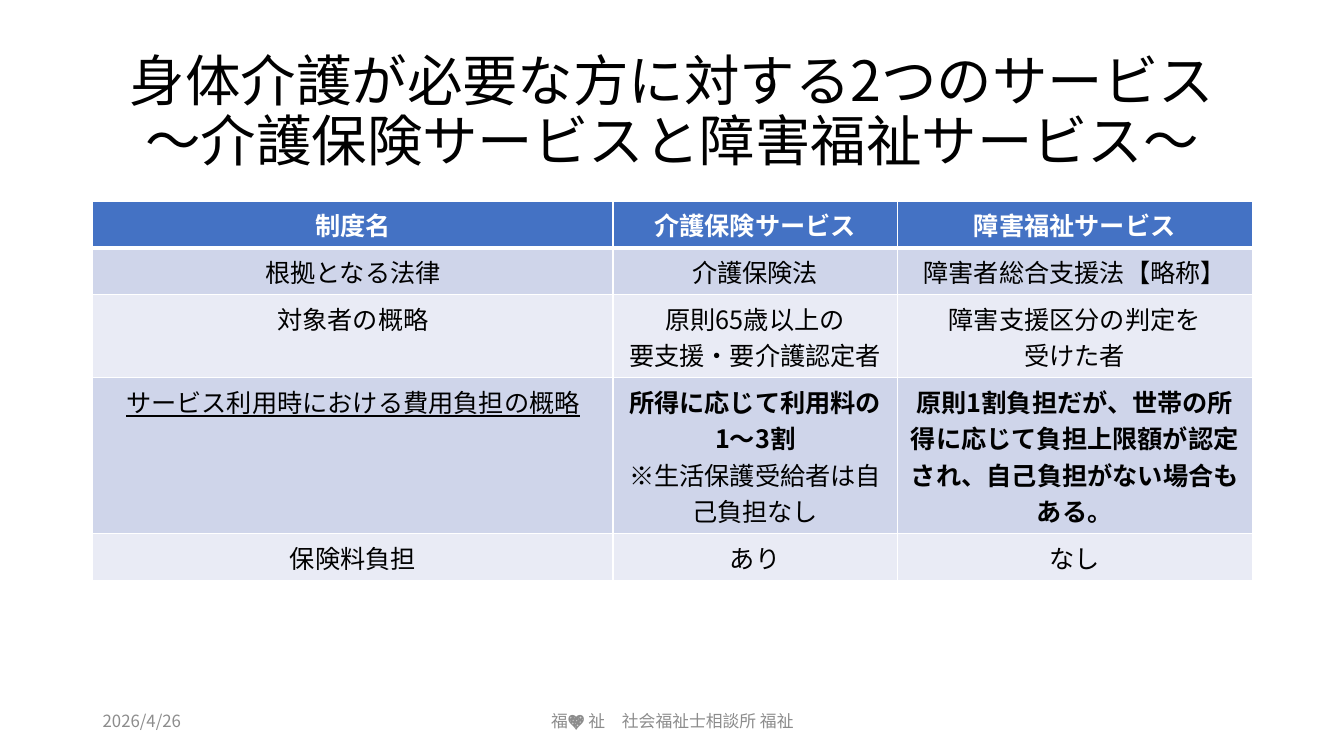
from pptx import Presentation
from pptx import util as u
from pptx.dml.color import RGBColor
from pptx.enum import text
from pptx.oxml.ns import qn
from lxml import etree

FONT = "Noto Sans CJK JP"
WIDTH, HEIGHT = u.Inches(13.33), u.Inches(7.5)
MARGIN = u.Inches(0.92)
COLUMNS = (5.16, 2.82, 3.52)
ROW = u.Inches(0.41)
BLACK, WHITE, GREY = "000000", "FFFFFF", "8C8C8C"
HEADER, BANDS = "4472C4", ("CFD5EA", "E9EBF5")
CENTER = text.PP_ALIGN.CENTER

# A cell is a list of paragraphs: (text, format)
BOLD, LINED = {"bold": True}, {"underline": True}
ROWS = [
    [[("制度名", BOLD)], [("介護保険サービス", BOLD)], [("障害福祉サービス", BOLD)]],
    [[("根拠となる法律", {})], [("介護保険法", {})], [("障害者総合支援法【略称】", {})]],
    [[("対象者の概略", {})],
     [("原則65歳以上の", {}), ("要支援・要介護認定者", {})],
     [("障害支援区分の判定を", {}), ("受けた者", {})]],
    [[("サービス利用時における費用負担の概略", LINED)],
     [("所得に応じて利用料の", BOLD), ("1～3割", BOLD),
      ("※生活保護受給者は自己負担なし", {})],
     [("原則1割負担だが、世帯の所得に応じて負担上限額が認定され、"
       "自己負担がない場合もある。", BOLD)]],
    [[("保険料負担", {})], [("あり", {})], [("なし", {})]],
]


def rgb(value):
    return RGBColor.from_string(value)


def write(p, words, size=18, color=BLACK, bold=False, underline=False,
          align=CENTER, spacing=None):
    """Fill a paragraph; a vertical tab in the words breaks the line."""
    p.text = words
    p.alignment = align
    if spacing:
        p.line_spacing = spacing
    for r in p.runs:
        r.font.size = u.Pt(size)
        r.font.name = FONT
        r.font.bold = bold
        r.font.underline = underline
        r.font.color.rgb = rgb(color)
        etree.SubElement(r.font._element, qn("a:ea"), typeface=FONT)


def place(sp, left, top, width, height):
    sp.left, sp.top, sp.width, sp.height = map(int, (left, top, width, height))


def add_title(s, words):
    sp = s.shapes.title
    place(sp, MARGIN, u.Inches(0.4), WIDTH - 2 * MARGIN, u.Inches(1.45))
    tf = sp.text_frame
    tf.auto_size = text.MSO_AUTO_SIZE.NONE
    tf.vertical_anchor = text.MSO_ANCHOR.MIDDLE
    write(tf.paragraphs[0], words, size=39.6, spacing=0.9)


def add_footer(s, words, left, width, align):
    sp = s.shapes.add_textbox(left, u.Inches(6.95), width, u.Inches(0.4))
    tf = sp.text_frame
    tf.word_wrap = True
    tf.vertical_anchor = text.MSO_ANCHOR.MIDDLE
    write(tf.paragraphs[0], words, size=12, color=GREY, align=align)


def add_borders(cell, top, bottom):
    tcPr = cell._tc.get_or_add_tcPr()
    for side, points in (("L", 1), ("R", 1), ("T", top), ("B", bottom)):
        ln = etree.SubElement(tcPr, qn(f"a:ln{side}"), w=str(u.Pt(points)))
        fill = etree.SubElement(ln, qn("a:solidFill"))
        etree.SubElement(fill, qn("a:srgbClr"), val=WHITE)


def fill_cell(cell, paragraphs, row):
    # A thick rule parts the header from the body
    add_borders(cell, top=3 if row == 1 else 1, bottom=3 if row == 0 else 1)
    cell.fill.solid()
    cell.fill.fore_color.rgb = rgb(BANDS[(row - 1) % 2] if row else HEADER)
    tf = cell.text_frame
    for i, (words, look) in enumerate(paragraphs):
        p = tf.add_paragraph() if i else tf.paragraphs[0]
        write(p, words, color=BLACK if row else WHITE, **look)


def add_comparison(s, rows):
    table = s.shapes.add_table(len(rows), len(COLUMNS), MARGIN, u.Inches(2),
                               u.Inches(sum(COLUMNS)), ROW * len(rows)).table
    for column, width in zip(table.columns, COLUMNS):
        column.width = u.Inches(width)
    for r, cells in enumerate(rows):
        table.rows[r].height = ROW
        for c, paragraphs in enumerate(cells):
            fill_cell(table.cell(r, c), paragraphs, r)


def main():
    prs = Presentation()
    prs.slide_width, prs.slide_height = WIDTH, HEIGHT
    s = prs.slides.add_slide(prs.slide_layouts[5])

    # Title and comparison table
    add_title(s, "身体介護が必要な方に対する2つのサービス\v"
                 "～介護保険サービスと障害福祉サービス～")
    add_comparison(s, ROWS)

    # Date and footer
    add_footer(s, "2026/4/26", MARGIN, u.Inches(3), text.PP_ALIGN.LEFT)
    add_footer(s, "福💖 祉　社会福祉士相談所 福祉",
               u.Inches(4.42), u.Inches(4.5), CENTER)

    prs.save("out.pptx")


if __name__ == "__main__":
    main()
